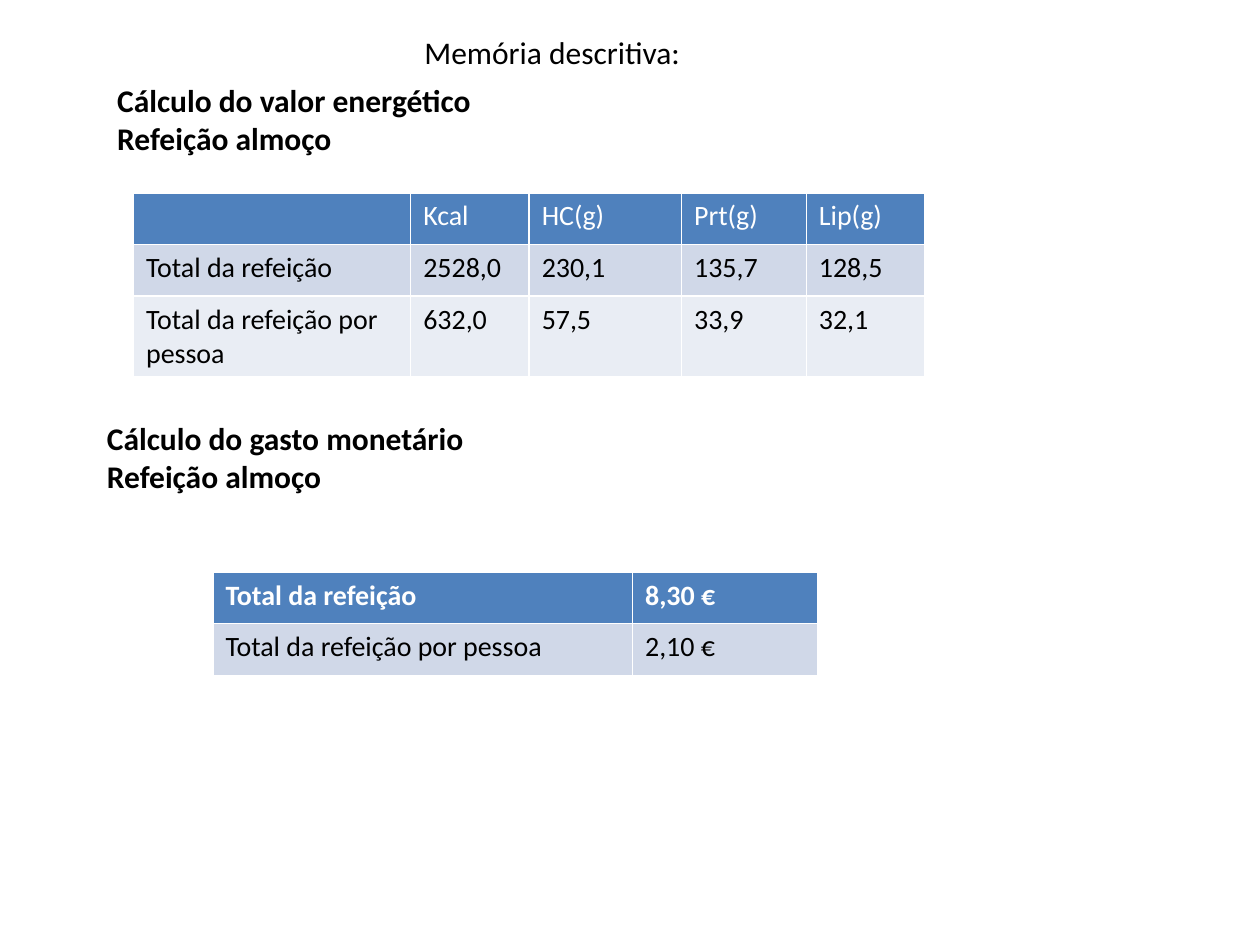
from pptx import Presentation
from pptx.dml.color import RGBColor as RGB
from pptx.enum.text import MSO_ANCHOR as Anchor, MSO_AUTO_SIZE as Fit, PP_ALIGN as Align
from pptx.util import Inches as In, Pt

# Content
FONT = "Calibri"
COLORS = {"head": "4F81BD", "odd": "D0D8E8", "even": "E9EDF4",
          "light": "FFFFFF", "dark": "000000"}
TITLE = "Cálculo do valor energético\vRefeição almoço"
# text, left, top, width, height, bold, wrap
NOTES = [
    ("Cálculo do gasto monetário\nRefeição almoço", 0.75, 3.28, 3.15, 0.71, True, True),
    ("Memória descritiva:", 3.27, 0.21, 2.25, 0.71, False, False),
]
ENERGY = [
    ("", "Kcal", "HC(g)", "Prt(g)", "Lip(g)"),
    ("Total da refeição", "2528,0", "230,1", "135,7", "128,5"),
    ("Total da refeição por pessoa", "632,0", "57,5", "33,9", "32,1"),
]
COST = [
    ("Total da refeição", "8,30 €"),
    ("Total da refeição por pessoa", "2,10 €"),
]
# rows, left, top, column widths, bold header
TABLES = [
    (ENERGY, 1.06, 1.53, (2.2, 0.94, 1.21, 0.99, 0.94), False),
    (COST, 1.69, 4.54, (3.33, 1.47), True),
]
ROW = 0.41


def style(frame, size, color, bold):
    for para in frame.paragraphs:
        font = para.font
        font.name, font.size, font.bold = FONT, Pt(size), bold
        font.color.rgb = RGB.from_string(COLORS[color])
        para.alignment = Align.LEFT


def add_grid(slide, rows, left, top, widths, bold):
    table = slide.shapes.add_table(len(rows), len(widths), In(left), In(top),
                                   In(sum(widths)), In(ROW * len(rows))).table
    for col, width in zip(table.columns, widths):
        col.width = In(width)
    for r, row in enumerate(rows):
        table.rows[r].height = In(ROW)
        band = "head" if r == 0 else "odd" if r % 2 else "even"
        for c, text in enumerate(row):
            cell = table.cell(r, c)
            cell.text = text
            cell.fill.solid()
            cell.fill.fore_color.rgb = RGB.from_string(COLORS[band])
            style(cell.text_frame, 16, "dark" if r else "light", bold and r == 0)


deck = Presentation()
deck.slide_width, deck.slide_height = In(10), In(7.5)
slide = deck.slides.add_slide(deck.slide_layouts[5])

# Title
title = slide.shapes.title
title.left, title.top, title.width, title.height = map(In, (0.83, 0.36, 3.32, 1.17))
frame = title.text_frame
frame.text = TITLE
frame.auto_size = Fit.NONE
frame.vertical_anchor = Anchor.MIDDLE
style(frame, 18, "dark", True)

# Tables
for spec_row in TABLES:
    add_grid(slide, *spec_row)

# Text boxes
for text, left, top, width, height, bold, wrap in NOTES:
    frame = slide.shapes.add_textbox(In(left), In(top), In(width), In(height)).text_frame
    frame.text = text
    frame.word_wrap = wrap
    frame.auto_size = Fit.SHAPE_TO_FIT_TEXT
    style(frame, 18, "dark", bold)

deck.save("out.pptx")
